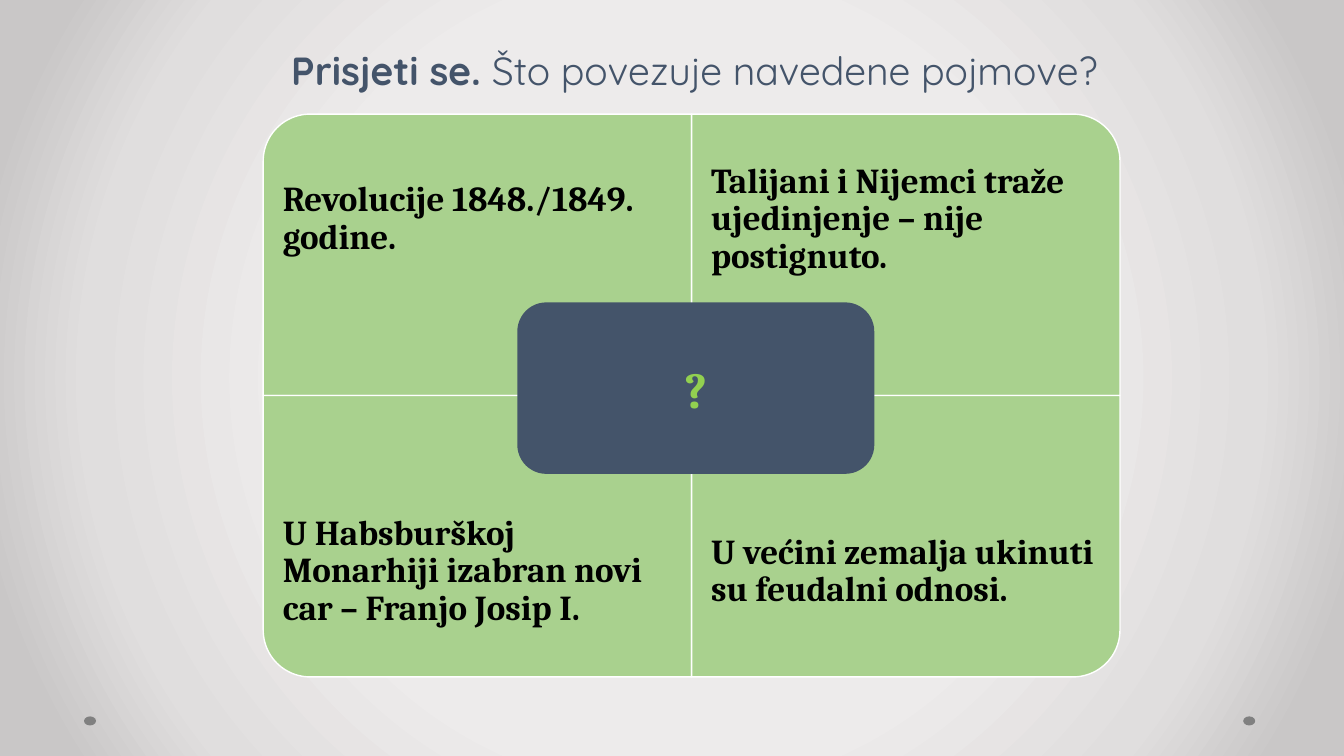
from pptx import Presentation
from pptx.dml.color import RGBColor
from pptx.enum.shapes import MSO_SHAPE as Shape
from pptx.enum.text import MSO_ANCHOR as Anchor, PP_ALIGN as Align
from pptx.oxml import parse_xml
from pptx.oxml.ns import nsdecls
from pptx.util import Pt

SLATE, GREEN, LIME = "44546A", "A9D18E", "92D050"
WHITE, BLACK, GREY = "FFFFFF", "000000", "808080"
BACKDROP = [(50, "EDEBEB"), (76, "E0DEDE"), (92, "C9C7C7")]

# Quadrant grid, in points
GRID_LEFT, GRID_TOP = 188, 81.5
QUADRANT_W, QUADRANT_H = 306, 201
TERM_H = 150.5

# Row by row: term and the turn that puts its round corner outside
QUADRANTS = [
    ("Revolucije 1848./1849. godine.", 270),
    ("Talijani i Nijemci traže ujedinjenje – nije postignuto.", 0),
    ("U Habsburškoj Monarhiji izabran novi car – Franjo Josip I.", 180),
    ("U većini zemalja ukinuti su feudalni odnosi.", 90),
]

TITLE_FONT = {"name": "Quicksand", "size": Pt(28)}
TERM_FONT = {"name": "Cambria", "size": Pt(25), "bold": True}
QUESTION_FONT = {"name": "Cambria", "size": Pt(36), "bold": True}


def rgb(hex_colour):
    return RGBColor.from_string(hex_colour)


def apply_format(target, values):
    for attribute, value in values.items():
        setattr(target, attribute, value)


def add_run(paragraph, text, font_format, colour):
    run = paragraph.add_run()
    run.text = text
    apply_format(run.font, font_format)
    run.font.color.rgb = rgb(colour)


def set_frame(frame, anchor, margin):
    sides = ("left", "top", "right", "bottom")
    apply_format(frame, {f"margin_{side}": Pt(margin) for side in sides})
    apply_format(frame, {"word_wrap": True, "vertical_anchor": anchor})


def add_box(shapes, kind, left, top, width, height, fill, line=None):
    box = shapes.add_shape(kind, Pt(left), Pt(top), Pt(width), Pt(height))
    box.shadow.inherit = False
    box.fill.solid()
    box.fill.fore_color.rgb = rgb(fill)
    if line:
        box.line.color.rgb = rgb(line)
        box.line.width = Pt(1)
    else:
        box.line.fill.background()
    return box


def paint_background(slide):
    slide.background.fill.gradient()
    gradient = slide.element.xpath("p:cSld/p:bg/p:bgPr/a:gradFill")[0]
    stops = "".join(
        f'<a:gs pos="{percent * 1000}"><a:srgbClr val="{colour}"/></a:gs>'
        for percent, colour in BACKDROP
    )
    radial = parse_xml(
        f'<a:gradFill {nsdecls("a")} rotWithShape="1"><a:gsLst>{stops}</a:gsLst>'
        '<a:path path="circle">'
        '<a:fillToRect l="50000" t="50000" r="50000" b="50000"/>'
        "</a:path></a:gradFill>"
    )
    gradient.getparent().replace(gradient, radial)


def add_title(slide):
    title = slide.shapes.title
    apply_format(title, {"left": Pt(79), "top": Pt(20),
                         "width": Pt(834), "height": Pt(50.5)})
    set_frame(title.text_frame, Anchor.BOTTOM, 3.6)
    heading = title.text_frame.paragraphs[0]
    apply_format(heading, {"alignment": Align.CENTER, "line_spacing": Pt(48)})
    add_run(heading, "Prisjeti se. ", {**TITLE_FONT, "bold": True}, SLATE)
    add_run(heading, "Što povezuje navedene pojmove?",
            {**TITLE_FONT, "bold": False}, SLATE)


def add_quadrant(shapes, row, column, term, turn):
    left = GRID_LEFT + column * QUADRANT_W
    top = GRID_TOP + row * QUADRANT_H
    # A quarter turn swaps the sides around the same centre
    width, height = QUADRANT_W, QUADRANT_H
    if turn % 180:
        width, height = height, width
    panel = add_box(shapes, Shape.ROUND_1_RECTANGLE,
                    left + (QUADRANT_W - width) / 2,
                    top + (QUADRANT_H - height) / 2,
                    width, height, GREEN, WHITE)
    panel.rotation = turn

    # The term keeps to the outer part, clear of the centre box
    term_top = top + row * (QUADRANT_H - TERM_H)
    label = shapes.add_textbox(Pt(left), Pt(term_top), Pt(QUADRANT_W), Pt(TERM_H))
    set_frame(label.text_frame, Anchor.MIDDLE, 14)
    paragraph = label.text_frame.paragraphs[0]
    paragraph.line_spacing = 0.9
    add_run(paragraph, term, TERM_FONT, BLACK)


def add_question(shapes):
    question = add_box(shapes, Shape.ROUNDED_RECTANGLE,
                       370, 216.5, 254, 121.5, SLATE, SLATE)
    set_frame(question.text_frame, Anchor.MIDDLE, 3.6)
    paragraph = question.text_frame.paragraphs[0]
    paragraph.alignment = Align.CENTER
    add_run(paragraph, "?", QUESTION_FONT, LIME)


def main():
    deck = Presentation()
    apply_format(deck, {"slide_width": Pt(960), "slide_height": Pt(540)})
    slide = deck.slides.add_slide(deck.slide_layouts[5])
    paint_background(slide)

    # Corner dots
    for dot_left in (888, 60):
        add_box(slide.shapes, Shape.OVAL, dot_left, 511.7, 8.6, 6.5, GREY)

    add_title(slide)

    # Four terms around the question
    matrix = slide.shapes.add_group_shape()
    for index, (term, turn) in enumerate(QUADRANTS):
        row, column = divmod(index, 2)
        add_quadrant(matrix.shapes, row, column, term, turn)
    add_question(slide.shapes)

    deck.save("out.pptx")


if __name__ == "__main__":
    main()
